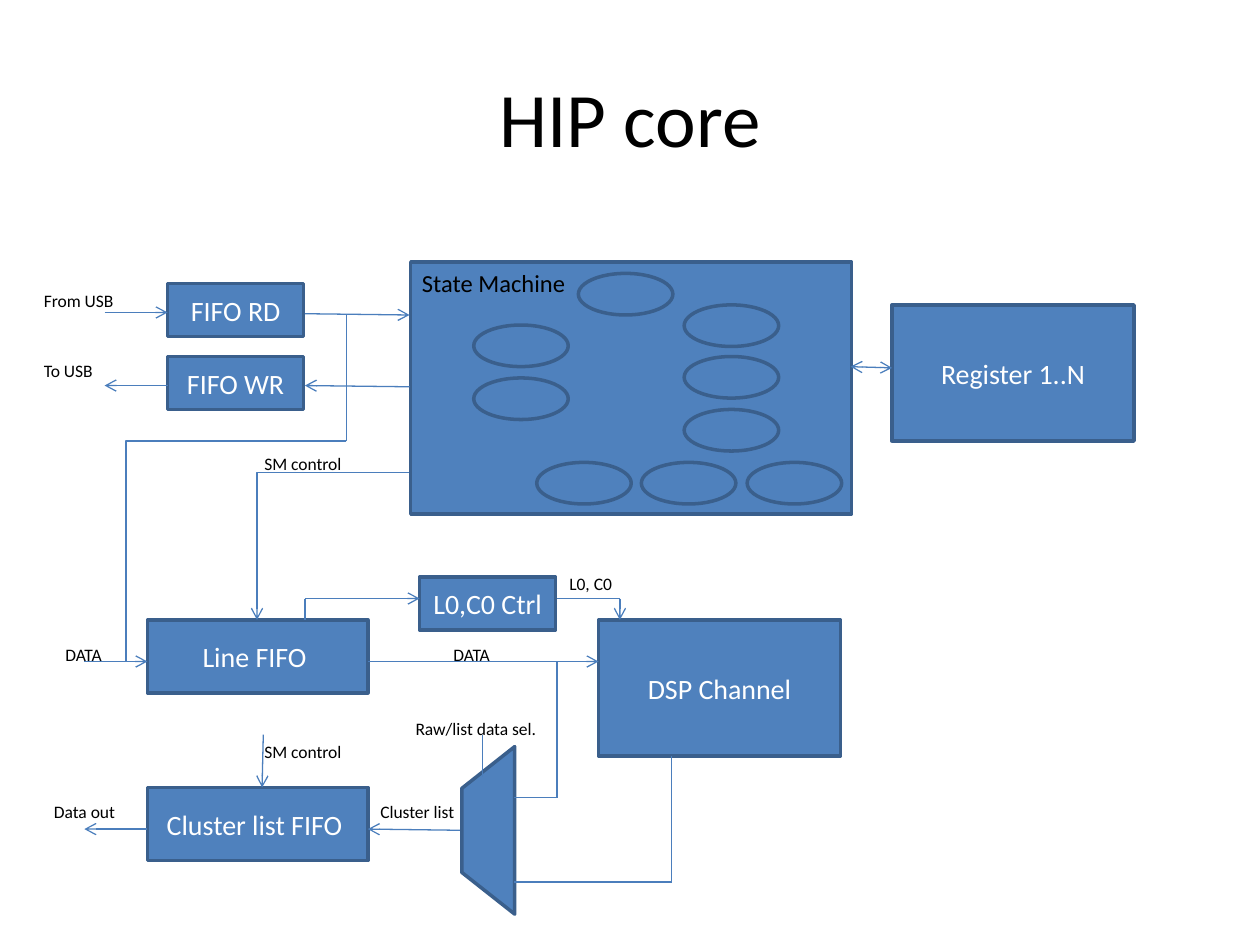
from lxml.etree import SubElement
from pptx import Presentation
from pptx.dml.color import RGBColor
from pptx.enum.shapes import MSO_CONNECTOR, MSO_SHAPE
from pptx.enum.text import MSO_ANCHOR, PP_ALIGN
from pptx.oxml.ns import qn
from pptx.util import Inches, Pt

BLUE = RGBColor(0x4F, 0x81, 0xBD)
EDGE = RGBColor(0x3A, 0x5F, 0x8C)
WIRE = RGBColor(0x4B, 0x7E, 0xBC)
BLACK = RGBColor(0, 0, 0)
WHITE = RGBColor(255, 255, 255)

SMALL, WIDE, LARGE = (1.08, 0.42), (1.75, 0.58), (1.92, 1.08)
STATE_MACHINE = (3.26, 2.08, 3.5, 2)
BLOCKS = [
    ("FIFO RD", 1.33, 2.25, SMALL),
    ("FIFO WR", 1.33, 2.83, SMALL),
    ("Register 1..N", 7.08, 2.42, LARGE),
    ("Line FIFO ", 1.17, 4.92, WIDE),
    ("L0,C0 Ctrl", 3.33, 4.58, SMALL),
    ("DSP Channel", 4.75, 4.92, LARGE),
    ("Cluster list FIFO ", 1.17, 6.25, WIDE),
]
STATE_SIZE = (0.75, 0.33)
STATES = [(4.59, 2.17), (3.76, 2.58), (3.76, 3)]
STATES += [(5.43, y) for y in (2.42, 2.83, 3.25)]
STATES += [(x, 3.67) for x in (4.26, 5.09, 5.93)]

LABELS = [
    ("SM control", 2, 5.83, 0.83),
    ("SM control", 2, 3.55, 0.83),
    ("Data out", 0.33, 6.31, 0.69),
    ("Cluster list", 2.92, 6.31, 0.8),
    ("DATA", 3.5, 5.06, 0.52),
    ("L0, C0", 4.42, 4.5, 0.55),
    ("DATA", 0.42, 5.06, 0.52),
    ("To USB", 0.25, 2.81, 0.61),
    ("From USB", 0.25, 2.25, 0.76),
    ("Raw/list data sel.", 3.2, 5.65, 1.17),
]
ARROWS = [
    (0.67, 5.25, 1.17, 5.25),
    (2.92, 5.25, 4.75, 5.25),
    (1.33, 3.06, 0.83, 3.06),
    (0.83, 2.48, 1.33, 2.48),
    (2.42, 2.49, 3.25, 2.5),
    (2.42, 4.75, 3.33, 4.75),
    (1.17, 6.58, 0.67, 6.58),
    (3.25, 3.07, 2.42, 3.06),
    (3.67, 6.59, 2.92, 6.58),
    (4.92, 4.75, 4.92, 4.92),
    (2.09, 5.83, 2.08, 6.25),
]
PLAIN_LINES = [
    (4.42, 4.75, 4.92, 4.75),
    (2.42, 4.75, 2.42, 4.92),
    (2.75, 2.5, 2.75, 3.5),
    (4.42, 5.25, 4.42, 6.33),
    (5.33, 6, 5.33, 7),
    (4.42, 6.33, 4.08, 6.33),
    (5.33, 7, 4.08, 7),
    (3.83, 5.83, 3.83, 6.17),
]
REGISTER_BUS = (6.75, 2.91, 7.08, 2.92)
SM_CONTROL_WIRE = (3.25, 3.75, 2.04, 4.92)
FIFO_DATA_WIRE = (2.75, 3.5, 1, 5.25)


def write(tf, text, size=10, color=BLACK, align=PP_ALIGN.LEFT,
          anchor=MSO_ANCHOR.TOP, wrap=False):
    tf.word_wrap = wrap
    tf.vertical_anchor = anchor
    p = tf.paragraphs[0]
    p.alignment = align
    r = p.add_run()
    r.text = text
    r.font.name = "Calibri"
    r.font.size = Pt(size)
    r.font.color.rgb = color


def add_text(s, text, box, **fmt):
    write(s.shapes.add_textbox(*map(Inches, box)).text_frame, text, **fmt)


def add_block(s, kind, box):
    sp = s.shapes.add_shape(kind, *map(Inches, box))
    sp.shadow.inherit = False
    sp.fill.solid()
    sp.fill.fore_color.rgb = BLUE
    sp.line.color.rgb = EDGE
    sp.line.width = Pt(2)
    return sp


def add_wire(s, ends, heads=(), elbow=False):
    kind = MSO_CONNECTOR.ELBOW if elbow else MSO_CONNECTOR.STRAIGHT
    c = s.shapes.add_connector(kind, *map(Inches, ends))
    c.line.color.rgb = WIRE
    c.line.width = Pt(0.75)
    props = c._element.spPr
    if elbow:
        props.find(qn("a:prstGeom")).set("prst", "bentConnector2")
    for head in heads:
        SubElement(props.find(qn("a:ln")), qn(head), type="arrow")
    SubElement(props, qn("a:effectLst"))


def main():
    prs = Presentation()
    prs.slide_width, prs.slide_height = Inches(10), Inches(7.5)
    s = prs.slides.add_slide(prs.slide_layouts[6])
    centred = dict(align=PP_ALIGN.CENTER, anchor=MSO_ANCHOR.MIDDLE, wrap=True)

    add_text(s, "HIP core", (0.5, 0.3, 9, 1.25), size=44, **centred)
    add_block(s, MSO_SHAPE.RECTANGLE, STATE_MACHINE)
    for state in STATES:
        add_block(s, MSO_SHAPE.OVAL, state + STATE_SIZE)
    add_text(s, "State Machine", (3.25, 2.08, 1.35, 0.34), size=14)
    for text, x, y, size in BLOCKS:
        sp = add_block(s, MSO_SHAPE.RECTANGLE, (x, y, *size))
        write(sp.text_frame, text, size=16, color=WHITE, **centred)

    for ends in ARROWS:
        add_wire(s, ends, ["a:tailEnd"])
    add_wire(s, REGISTER_BUS, ["a:headEnd", "a:tailEnd"])
    add_wire(s, SM_CONTROL_WIRE, ["a:tailEnd"], elbow=True)
    add_wire(s, FIFO_DATA_WIRE, elbow=True)

    mux = add_block(s, MSO_SHAPE.TRAPEZOID, (3.21, 6.38, 1.33, 0.42))
    mux.rotation = 270
    mux.adjustments[0] = 0.79
    for ends in PLAIN_LINES:
        add_wire(s, ends)
    for text, x, y, width in LABELS:
        add_text(s, text, (x, y, width, 0.27))
    prs.save("out.pptx")


if __name__ == "__main__":
    main()
